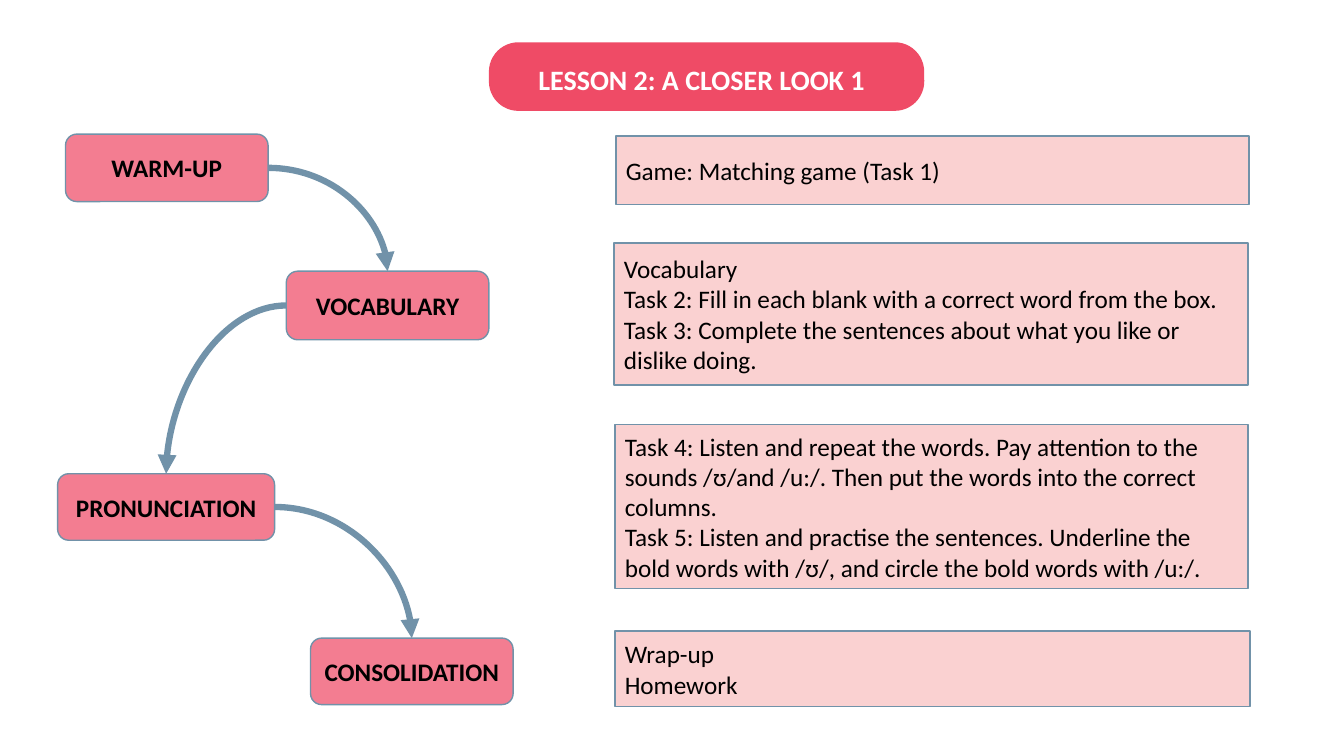
from dataclasses import dataclass
from itertools import pairwise

from lxml.etree import SubElement
from pptx import Presentation
from pptx.dml.color import RGBColor
from pptx.enum.shapes import MSO_CONNECTOR, MSO_SHAPE
from pptx.enum.text import MSO_ANCHOR, MSO_AUTO_SIZE, PP_ALIGN
from pptx.oxml.ns import qn
from pptx.util import Pt

TITLE = "LESSON 2: A CLOSER LOOK 1"
PILL = (349.2, 30.2, 311, 49)
TITLE_BOX = (377.3, 41, 283, 31.7)

# name, (left, top, width, height), side where the arrow leaves
STEPS = [
    ("WARM-UP", (46.8, 95.8, 144.7, 48.2), "right"),
    ("VOCABULARY", (204.5, 193.7, 144.7, 49), "left"),
    ("PRONUNCIATION", (41.2, 338.4, 155, 47.5), "right"),
    ("CONSOLIDATION", (221.8, 455.8, 144.7, 47.5), None),
]
NOTES = [
    (["Game: Matching game (Task 1)"], (439.9, 97.2, 452.2, 49)),
    (["Vocabulary",
      "Task 2: Fill in each blank with a correct word from the box.",
      "Task 3: Complete the sentences about what you like or dislike doing."],
     (438.5, 173.5, 452.9, 101.5)),
    (["Task 4: Listen and repeat the words. Pay attention to the sounds /ʊ/and /u:/. "
      "Then put the words into the correct columns.",
      "Task 5: Listen and practise the sentences. Underline the bold words with /ʊ/, "
      "and circle the bold words with /u:/."],
     (439.2, 303.1, 452.2, 117.4)),
    (["Wrap-up", "Homework"], (439.2, 450.7, 453.6, 54)),
]
SITES = {"top": 0, "left": 1, "right": 3}


@dataclass(frozen=True)
class Theme:
    pill: RGBColor = RGBColor.from_string("EF4B66")
    step: RGBColor = RGBColor.from_string("F37D91")
    note: RGBColor = RGBColor.from_string("F7A5A5")
    line: RGBColor = RGBColor.from_string("7192A9")
    dark: RGBColor = RGBColor.from_string("000000")
    light: RGBColor = RGBColor.from_string("FFFFFF")
    font: str = "Calibri"
    head: int = 20
    body: int = 18
    edge: float = 1
    arrow: float = 4.5


theme = Theme()


def write(shape, lines, size, color, bold, align, anchor):
    frame = shape.text_frame
    frame.text = "\n".join(lines)
    frame.word_wrap = True
    frame.auto_size = MSO_AUTO_SIZE.NONE
    frame.vertical_anchor = anchor
    for para in frame.paragraphs:
        para.alignment = align
        para.line_spacing = 1.0
        para.space_before = Pt(0)
        font = para.font
        font.name, font.size, font.bold = theme.font, Pt(size), bold
        font.color.rgb = color


def add_box(slide, kind, box, fill, edge=True):
    shape = slide.shapes.add_shape(kind, *map(Pt, box))
    shape.shadow.inherit = False
    shape.fill.solid()
    shape.fill.fore_color.rgb = fill
    if edge:
        shape.line.color.rgb = theme.line
        shape.line.width = Pt(theme.edge)
    else:
        shape.line.fill.background()
    return shape


def add_title(slide):
    pill = add_box(slide, MSO_SHAPE.ROUNDED_RECTANGLE, PILL, theme.pill, edge=False)
    pill.adjustments[0] = 0.43
    title = slide.shapes.title
    title.left, title.top, title.width, title.height = map(Pt, TITLE_BOX)
    write(title, [TITLE], theme.head, theme.light, True, PP_ALIGN.LEFT, MSO_ANCHOR.TOP)
    pill._element.addnext(title._element)  # text in front of the pill


def add_step(slide, name, box):
    step = add_box(slide, MSO_SHAPE.ROUNDED_RECTANGLE, box, theme.step)
    step.text_frame.margin_left = step.text_frame.margin_right = Pt(3)
    write(step, [name], theme.body, theme.dark, True, PP_ALIGN.CENTER, MSO_ANCHOR.MIDDLE)
    return step


def add_note(slide, lines, box):
    note = add_box(slide, MSO_SHAPE.RECTANGLE, box, theme.note)
    color = note._element.spPr.find(qn("a:solidFill"))[0]
    SubElement(color, qn("a:alpha"), val="50000")
    write(note, lines, theme.body, theme.dark, False, PP_ALIGN.LEFT, MSO_ANCHOR.MIDDLE)


def add_arrow(slide, start, side, end):
    """Quarter curve from a side of one step to the top of the next."""
    arrow = slide.shapes.add_connector(MSO_CONNECTOR.CURVE, 0, 0, 0, 0)
    arrow.begin_connect(start, SITES[side])
    arrow.end_connect(end, SITES["top"])
    arrow.line.color.rgb = theme.line
    arrow.line.width = Pt(theme.arrow)
    props = arrow._element.spPr
    props.find(qn("a:prstGeom")).set("prst", "curvedConnector2")
    SubElement(props.find(qn("a:ln")), qn("a:tailEnd"), type="triangle")
    SubElement(props, qn("a:effectLst"))


def main():
    deck = Presentation()
    deck.slide_width, deck.slide_height = Pt(960), Pt(540)
    slide = deck.slides.add_slide(deck.slide_layouts[5])
    add_title(slide)
    steps = [(add_step(slide, name, box), side) for name, box, side in STEPS]
    for (start, side), (end, _) in pairwise(steps):
        add_arrow(slide, start, side, end)
    for lines, box in NOTES:
        add_note(slide, lines, box)
    deck.save("out.pptx")


if __name__ == "__main__":
    main()
